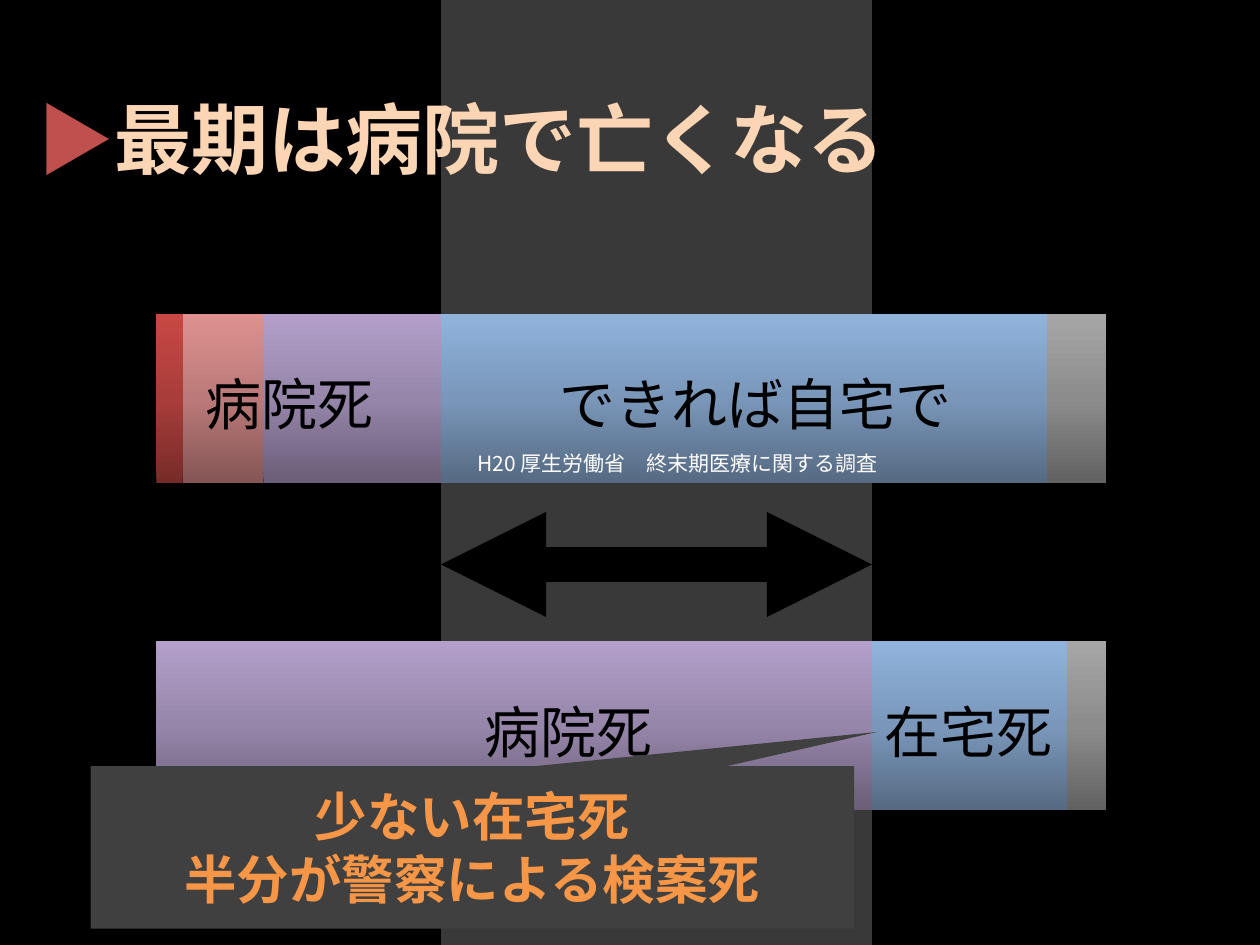
from copy import deepcopy

from lxml import etree
from pptx import Presentation
from pptx.dml.color import RGBColor
from pptx.enum.shapes import MSO_CONNECTOR, MSO_SHAPE
from pptx.enum.text import MSO_ANCHOR, MSO_AUTO_SIZE, PP_ALIGN
from pptx.oxml.ns import qn
from pptx.util import Inches, Pt

RECTANGLE = MSO_SHAPE.RECTANGLE
CALLOUT = MSO_SHAPE.RECTANGULAR_CALLOUT
STRAIGHT = MSO_CONNECTOR.STRAIGHT
LEFT, CENTER = PP_ALIGN.LEFT, PP_ALIGN.CENTER
MIDDLE, TOP = MSO_ANCHOR.MIDDLE, MSO_ANCHOR.TOP
FIT_SHAPE = MSO_AUTO_SIZE.SHAPE_TO_FIT_TEXT
TITLE_ONLY = 5

BLACK = RGBColor(0x00, 0x00, 0x00)
WHITE = RGBColor(0xFF, 0xFF, 0xFF)
BAND_GRAY = RGBColor(0xBF, 0xBF, 0xBF)
CALLOUT_GRAY = RGBColor(0x40, 0x40, 0x40)
MARKER_RED = RGBColor(0xC0, 0x50, 0x4D)
PEACH = RGBColor(0xFC, 0xD5, 0xB5)
ORANGE = RGBColor(0xF7, 0x96, 0x46)

# Gradients run from the dark foot of a bar to its light top.
RED = [RGBColor(0x77, 0x2B, 0x29), RGBColor(0xA9, 0x3D, 0x3A), RGBColor(0xC9, 0x48, 0x44)]
PINK = [RGBColor(0x84, 0x56, 0x55), RGBColor(0xBB, 0x7A, 0x79), RGBColor(0xDE, 0x91, 0x8F)]
PURPLE = [RGBColor(0x6A, 0x5E, 0x78), RGBColor(0x96, 0x86, 0xAA), RGBColor(0xB3, 0x9F, 0xCA)]
BLUE = [RGBColor(0x56, 0x6A, 0x83), RGBColor(0x7A, 0x97, 0xBA), RGBColor(0x90, 0xB3, 0xDC)]
GRAY = [RGBColor(0x62, 0x62, 0x62), RGBColor(0x8C, 0x8C, 0x8C), RGBColor(0xA6, 0xA6, 0xA6)]

BAR_LEFT, BAR_HEIGHT = 1.24, 1.34
WISH_TOP, ACTUAL_TOP = 2.49, 5.09
GAP_LEFT, GAP_RIGHT = 3.5, 6.92


def add_run(paragraph, text, *, size, color, bold=False, font="Noto Sans CJK JP"):
    run = paragraph.add_run()
    run.text = text
    run.font.name = font
    run.font.size = Pt(size)
    run.font.bold = bold
    run.font.color.rgb = color
    east_asian = etree.SubElement(run.font._element, qn("a:ea"))
    east_asian.set("typeface", font)


def fill_gradient(fill, shape, colors):
    fill.gradient()
    fill.gradient_angle = 90
    stop_list = shape.element.spPr.find(".//" + qn("a:gsLst"))
    stop_list.insert(1, deepcopy(stop_list[0]))
    for index, (stop, color) in enumerate(zip(fill.gradient_stops, colors)):
        stop.position = index / (len(colors) - 1)
        stop.color.rgb = color


class SlideBuilder:
    def __init__(self, slide):
        self.slide = slide
        self.shapes = slide.shapes
        slide.background.fill.solid()
        slide.background.fill.fore_color.rgb = BLACK

    def start_group(self):
        self.shapes = self.slide.shapes.add_group_shape().shapes

    def end_group(self):
        self.shapes = self.slide.shapes

    def box(self, left, top, width, height, fill, kind=RECTANGLE, alpha=None):
        """Add a borderless shape; a list of colours as fill makes a gradient."""
        shape = self.shapes.add_shape(
            kind, Inches(left), Inches(top), Inches(width), Inches(height))
        shape.shadow.inherit = False
        shape.line.fill.background()
        if isinstance(fill, list):
            fill_gradient(shape.fill, shape, fill)
        else:
            shape.fill.solid()
            shape.fill.fore_color.rgb = fill
        if alpha is not None:
            color = shape.element.spPr.find(".//" + qn("a:srgbClr"))
            etree.SubElement(color, qn("a:alpha")).set("val", str(alpha * 1000))
        return shape

    def stacked_bar(self, top, segments):
        """Add segments, each given by its right edge and gradient."""
        left = BAR_LEFT
        for right, colors in segments:
            self.box(left, top, right - left, BAR_HEIGHT, colors)
            left = right

    def label(self, text, left, top, width, height, size=32, color=BLACK):
        shape = self.shapes.add_textbox(
            Inches(left), Inches(top), Inches(width), Inches(height))
        frame = shape.text_frame
        frame.word_wrap = False
        frame.auto_size = FIT_SHAPE
        add_run(frame.paragraphs[0], text, size=size, color=color)

    def double_arrow(self, left, right, y, width):
        connector = self.shapes.add_connector(
            STRAIGHT, Inches(left), Inches(y), Inches(right), Inches(y))
        connector.line.color.rgb = BLACK
        connector.line.width = Pt(width)
        line = connector.element.spPr.find(qn("a:ln"))
        for end in ("a:headEnd", "a:tailEnd"):
            etree.SubElement(line, qn(end)).set("type", "triangle")
        etree.SubElement(connector.element.spPr, qn("a:effectLst"))

    def title(self, marker, text, left, top, width, height):
        title = self.slide.shapes.title
        title.left, title.top = Inches(left), Inches(top)
        title.width, title.height = Inches(width), Inches(height)
        frame = title.text_frame
        frame.word_wrap = False
        frame.auto_size = FIT_SHAPE
        frame.vertical_anchor = TOP
        paragraph = frame.paragraphs[0]
        paragraph.alignment = LEFT
        add_run(paragraph, marker, size=44, color=MARKER_RED)
        add_run(paragraph, text, size=44, color=PEACH, bold=True)
        # The title lies in front of the translucent band.
        title.element.getparent().append(title.element)

    def callout(self, lines, left, top, width, height, tip):
        shape = self.box(left, top, width, height, CALLOUT_GRAY, CALLOUT)
        shape.adjustments[0], shape.adjustments[1] = tip
        frame = shape.text_frame
        frame.vertical_anchor = MIDDLE
        for index, line in enumerate(lines):
            paragraph = frame.add_paragraph() if index else frame.paragraphs[0]
            paragraph.alignment = CENTER
            add_run(paragraph, line, size=30, color=ORANGE, bold=True)


def main():
    presentation = Presentation()
    presentation.slide_width, presentation.slide_height = Inches(10), Inches(7.5)
    layout = presentation.slide_layouts[TITLE_ONLY]
    builder = SlideBuilder(presentation.slides.add_slide(layout))

    builder.box(GAP_LEFT, 0, GAP_RIGHT - GAP_LEFT, 7.53, BAND_GRAY, alpha=30)

    builder.start_group()
    builder.stacked_bar(WISH_TOP, [
        (1.45, RED), (2.09, PINK), (GAP_LEFT, PURPLE), (8.31, BLUE), (8.78, GRAY)])
    builder.label("できれば自宅で", 4.34, 2.88, 3.34, 0.64)
    builder.label("病院死", 1.53, 2.88, 1.55, 0.64)
    builder.label("H20 厚生労働省　終末期医療に関する調査",
                  3.69, 3.53, 3.46, 0.3, size=12, color=WHITE)

    builder.start_group()
    builder.stacked_bar(ACTUAL_TOP, [(GAP_RIGHT, PURPLE), (8.47, BLUE), (8.78, GRAY)])
    builder.label("在宅死", GAP_RIGHT, 5.49, 1.55, 0.64)
    builder.label("病院死", 3.75, 5.49, 1.55, 0.64)
    builder.end_group()

    builder.double_arrow(GAP_LEFT, GAP_RIGHT, 4.48, 20)
    builder.title("▶", "最期は病院で亡くなる", 0.2, 0.68, 6.99, 0.84)
    builder.callout(["少ない在宅死", "半分が警察による検案死"],
                    0.72, 6.08, 6.06, 1.29, tip=(0.53, -0.71))

    presentation.save("out.pptx")


if __name__ == "__main__":
    main()
